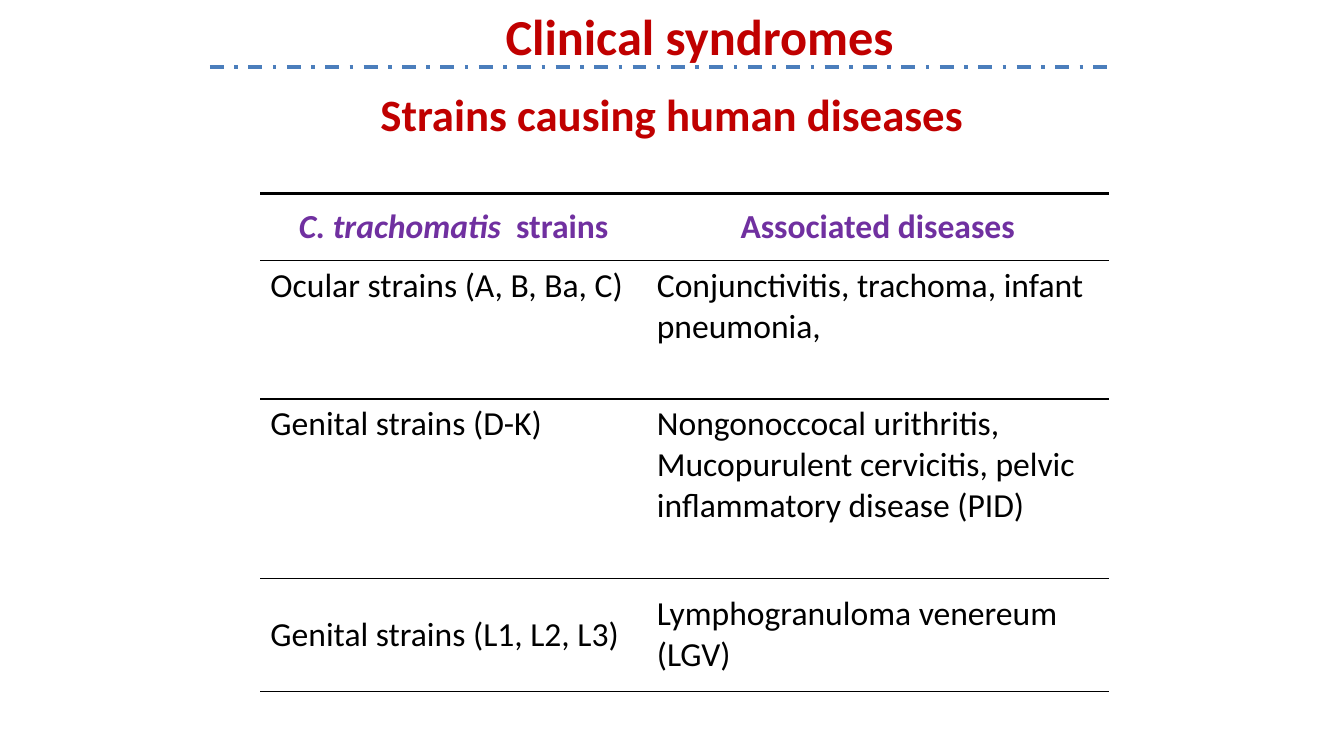
"""Build the slide on Chlamydia trachomatis strains and their diseases."""
import dataclasses

import lxml.etree
import pptx
import pptx.dml.color
import pptx.enum.dml
import pptx.enum.shapes
import pptx.enum.text
import pptx.oxml.ns
import pptx.slide
import pptx.table
import pptx.text.text
import pptx.util

Align = pptx.enum.text.PP_ALIGN
Anchor = pptx.enum.text.MSO_ANCHOR
qn = pptx.oxml.ns.qn

GRID_COLUMNS, GRID_ROWS = 160, 90
CELL = pptx.util.Inches(1 / 12)


@dataclasses.dataclass(frozen=True)
class Theme:
    font: str = "Calibri"
    heading: str = "C00000"
    header: str = "7030A0"
    body: str = "000000"
    divider: str = "4B7EBC"
    title_size: int = 36
    subtitle_size: int = 32
    table_size: int = 24
    divider_width: float = 2.5
    top_rule: float = 2.25
    rule: float = 1


@dataclasses.dataclass(frozen=True)
class Run:
    text: str
    size: int
    color: str
    bold: bool = False
    italic: bool = False


@dataclasses.dataclass(frozen=True)
class Heading:
    run: Run
    column: float
    row: float
    columns: float
    rows: float
    align: Align
    anchor: Anchor


@dataclasses.dataclass(frozen=True)
class StrainRow:
    strains: tuple[Run, ...]
    diseases: tuple[Run, ...]
    rows: float
    anchor: Anchor = Anchor.TOP
    align: Align = Align.LEFT


THEME = Theme()


def grid(units: float) -> pptx.util.Emu:
    return pptx.util.Emu(round(units * CELL))


def header(text: str, italic: bool = False) -> Run:
    return Run(text, THEME.table_size, THEME.header, True, italic)


def body(text: str) -> tuple[Run, ...]:
    return (Run(text, THEME.table_size, THEME.body),)


HEADINGS = (
    Heading(Run("Strains causing human diseases", THEME.subtitle_size, THEME.heading, True),
            29, 6, 102, 15, Align.CENTER, Anchor.MIDDLE),
    Heading(Run("Clinical syndromes", THEME.title_size, THEME.heading, True),
            59, 0, 50.5, 8.5, Align.LEFT, Anchor.TOP),
)
STRAIN_ROWS = (
    StrainRow((header("C. trachomatis ", True), header(" strains")),
              (header("Associated diseases"),), 8, Anchor.MIDDLE, Align.CENTER),
    StrainRow(body("Ocular strains (A, B, Ba, C)"),
              body("Conjunctivitis, trachoma, infant pneumonia,"), 16.5),
    StrainRow(body("Genital strains (D-K)"),
              body("Nongonoccocal urithritis, Mucopurulent cervicitis, "
                   "pelvic inflammatory disease (PID)"), 21.4),
    StrainRow(body("Genital strains (L1, L2, L3)"),
              body("Lymphogranuloma venereum (LGV)"), 13.4, Anchor.MIDDLE),
)
TABLE_COLUMN, TABLE_ROW = 31, 23
COLUMN_WIDTHS = (46, 55)
DIVIDER_START, DIVIDER_END, DIVIDER_ROW = 25, 133, 8


def write(frame: pptx.text.text.TextFrame, runs: tuple[Run, ...], align: Align) -> None:
    paragraph = frame.paragraphs[0]
    paragraph.alignment = align
    for part in runs:
        run = paragraph.add_run()
        run.text = part.text
        run.font.name = THEME.font
        run.font.size = pptx.util.Pt(part.size)
        run.font.bold = part.bold
        run.font.italic = part.italic
        run.font.color.rgb = pptx.dml.color.RGBColor.from_string(part.color)


def draw_heading(slide: pptx.slide.Slide, heading: Heading) -> None:
    box = slide.shapes.add_textbox(grid(heading.column), grid(heading.row),
                                   grid(heading.columns), grid(heading.rows))
    box.text_frame.word_wrap = True
    box.text_frame.vertical_anchor = heading.anchor
    write(box.text_frame, (heading.run,), heading.align)


def set_borders(cell: pptx.table._Cell, top: float, bottom: float) -> None:
    properties = cell._tc.get_or_add_tcPr()
    widths = {"a:lnL": 0, "a:lnR": 0, "a:lnT": top, "a:lnB": bottom}
    for position, (tag, width) in enumerate(widths.items()):
        line = lxml.etree.Element(qn(tag), w=str(pptx.util.Pt(width)))
        if width:
            fill = lxml.etree.SubElement(line, qn("a:solidFill"))
            lxml.etree.SubElement(fill, qn("a:srgbClr"), val=THEME.body)
        else:
            lxml.etree.SubElement(line, qn("a:noFill"))
        properties.insert(position, line)


def draw_table(slide: pptx.slide.Slide) -> None:
    table = slide.shapes.add_table(
        len(STRAIN_ROWS), len(COLUMN_WIDTHS), grid(TABLE_COLUMN), grid(TABLE_ROW),
        grid(sum(COLUMN_WIDTHS)), grid(sum(row.rows for row in STRAIN_ROWS))).table
    table.first_row = False
    table.horz_banding = False
    for column, width in zip(table.columns, COLUMN_WIDTHS):
        column.width = grid(width)
    for index, entry in enumerate(STRAIN_ROWS):
        table.rows[index].height = grid(entry.rows)
        for column, runs in enumerate((entry.strains, entry.diseases)):
            cell = table.cell(index, column)
            cell.fill.background()
            cell.vertical_anchor = entry.anchor
            set_borders(cell, THEME.rule if index else THEME.top_rule, THEME.rule)
            write(cell.text_frame, runs, entry.align)


def draw_divider(slide: pptx.slide.Slide) -> None:
    divider = slide.shapes.add_connector(
        pptx.enum.shapes.MSO_CONNECTOR.STRAIGHT, grid(DIVIDER_START), grid(DIVIDER_ROW),
        grid(DIVIDER_END), grid(DIVIDER_ROW))
    divider.line.color.rgb = pptx.dml.color.RGBColor.from_string(THEME.divider)
    divider.line.width = pptx.util.Pt(THEME.divider_width)
    divider.line.dash_style = pptx.enum.dml.MSO_LINE.DASH_DOT
    lxml.etree.SubElement(divider._element.spPr, qn("a:effectLst"))


def main() -> None:
    deck = pptx.Presentation()
    deck.slide_width = grid(GRID_COLUMNS)
    deck.slide_height = grid(GRID_ROWS)
    slide = deck.slides.add_slide(deck.slide_layouts[6])
    subtitle, title = HEADINGS
    draw_heading(slide, subtitle)
    draw_table(slide)
    draw_heading(slide, title)
    draw_divider(slide)
    deck.save("out.pptx")


if __name__ == "__main__":
    main()
